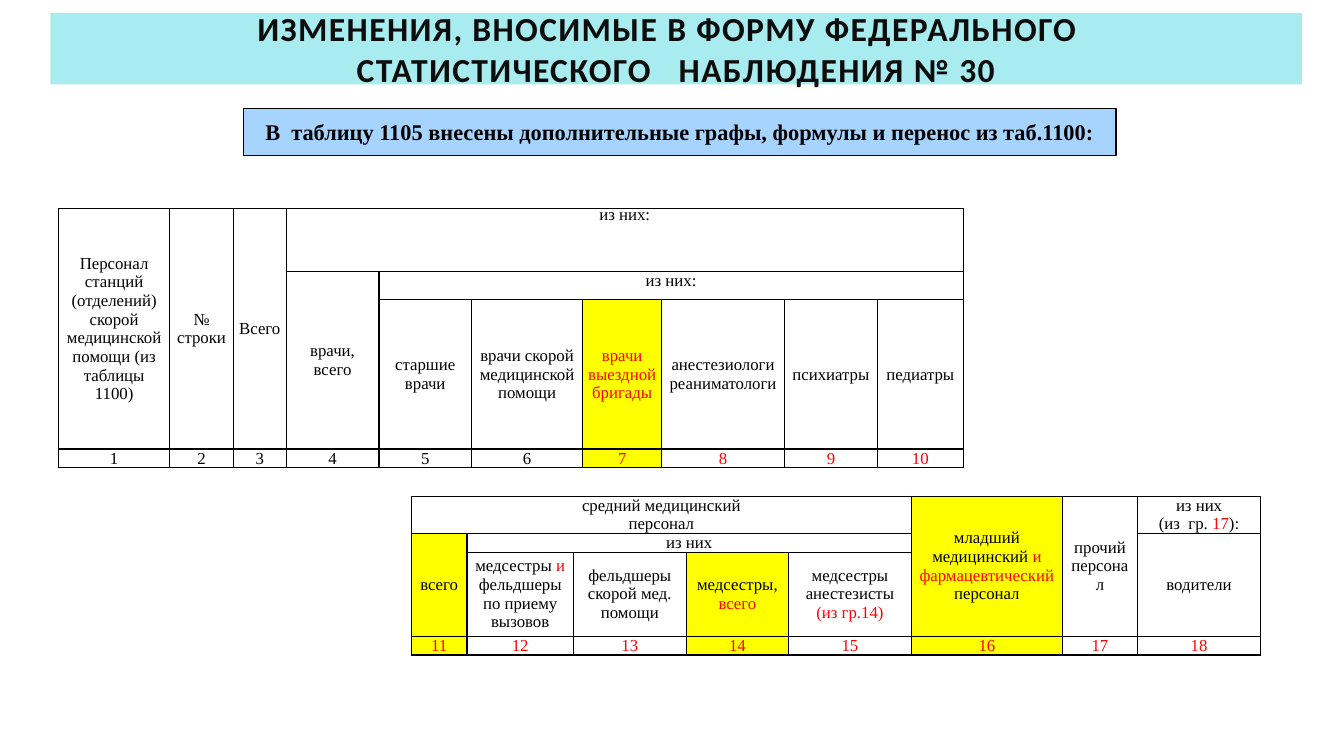
import pptx
import pptx.util
import pptx.dml.color
import pptx.enum.text
import pptx.enum.shapes
import pptx.oxml
import pptx.oxml.ns

Pt = pptx.util.Pt
ANCHOR = pptx.enum.text.MSO_ANCHOR

HUES = {"ink": "000000", "title": "0D0D0D", "red": "FF0000",
        "yellow": "FFFF00", "aqua": "A8ECEF", "sky": "A7D3FF"}

TITLE = ["ИЗМЕНЕНИЯ, ВНОСИМЫЕ В ФОРМУ ФЕДЕРАЛЬНОГО  ",
         "СТАТИСТИЧЕСКОГО   НАБЛЮДЕНИЯ № 30"]
NOTE = ["В  таблицу 1105 внесены дополнительные графы, формулы и перенос из таб.1100:"]

DOCTORS = {
    "left": 41.8, "top": 149.2,
    "cols": [79.5, 45.4, 37.8, 66.2, 66.2, 79.4, 56.4, 87.8, 66.3, 61.4],
    "rows": [45, 20, 106.6, 13.3],
    "cells": [
        (0, 0, 3, 1, "Персонал станций (отделений)\nскорой медицинской помощи (из таблицы 1100)"),
        (0, 1, 3, 1, "№\nстроки"),
        (0, 2, 3, 1, "Всего"),
        (0, 3, 1, 7, "из них:"),
        (1, 3, 2, 1, "врачи, всего"),
        (1, 4, 1, 6, "из них:"),
        (2, 4, 1, 1, "старшие врачи"),
        (2, 5, 1, 1, "врачи скорой медицинской помощи"),
        (2, 6, 1, 1, "*врачи выездной бригады*"),
        (2, 7, 1, 1, "анестезиологи реаниматологи"),
        (2, 8, 1, 1, "психиатры"),
        (2, 9, 1, 1, "педиатры"),
    ],
    "first": 1,
    "yellow": [(2, 6), (3, 6)],
    "narrow": [(2, 9)],
    "high": [(0, 3), (1, 4)],
    "tight": [(0, 3)],
}

STAFF = {
    "left": 293.8, "top": 354.4,
    "cols": [39.8, 76, 80.6, 73.1, 87.8, 107.8, 53.8, 87.8],
    "rows": [26.5, 13.4, 60, 13.4],
    "cells": [
        (0, 0, 1, 5, "средний медицинский\nперсонал"),
        (0, 5, 3, 1, "младший\nмедицинский *и фармацевтический* персонал"),
        (0, 6, 3, 1, "прочий персонал"),
        (0, 7, 1, 1, "из них\n(из  гр. *17*):"),
        (1, 0, 2, 1, "всего"),
        (1, 1, 1, 4, "из них"),
        (1, 7, 2, 1, "водители"),
        (2, 1, 1, 1, "медсестры *и *фельдшеры по приему вызовов"),
        (2, 2, 1, 1, "фельдшеры скорой мед.\nпомощи"),
        (2, 3, 1, 1, "медсестры, *всего*"),
        (2, 4, 1, 1, "медсестры анестезисты *(из гр.14)*"),
    ],
    "first": 11,
    "yellow": [(0, 5), (1, 0), (2, 3), (3, 0), (3, 3), (3, 5)],
    "narrow": [(0, 5), (0, 7)],
    "high": [],
    "tight": [],
}
FIRST_RED = 7


def rgb(name):
    return pptx.dml.color.RGBColor.from_string(HUES[name])


def write(frame, lines, size=12, font="Times New Roman", hue="ink",
          bold=False, gap=0, lead=None):
    for i, line in enumerate(lines):
        para = frame.paragraphs[0] if i == 0 else frame.add_paragraph()
        para.alignment = pptx.enum.text.PP_ALIGN.CENTER
        if lead:
            para.line_spacing = Pt(lead)
        for j, part in enumerate(line.split("*")):
            for k, bit in enumerate(part.split("\n")):
                if k:
                    para.add_line_break()
                if not bit:
                    continue
                run = para.add_run()
                run.text = bit
                run.font.size = Pt(size)
                run.font.name = font
                run.font.bold = bold
                run.font.color.rgb = rgb("red" if j % 2 else hue)
                if gap:
                    run.font._element.set("spc", str(gap * 100))


def banner(slide, box, fill, lines, edge=False, wrap=True, **look):
    shape = slide.shapes.add_shape(pptx.enum.shapes.MSO_SHAPE.RECTANGLE,
                                   *[Pt(v) for v in box])
    shape.shadow.inherit = False
    shape.fill.solid()
    shape.fill.fore_color.rgb = rgb(fill)
    if edge:
        shape.line.color.rgb = rgb("ink")
        shape.line.width = Pt(0.75)
    else:
        shape.line.fill.background()
    frame = shape.text_frame
    frame.word_wrap = wrap
    frame.vertical_anchor = ANCHOR.MIDDLE
    write(frame, lines, **look)


def border(cell):
    props = cell._tc.get_or_add_tcPr()
    for i, side in enumerate("LRTB"):
        props.insert(i, pptx.oxml.parse_xml(
            f'<a:ln{side} {pptx.oxml.ns.nsdecls("a")} w="{Pt(1)}"><a:solidFill>'
            f'<a:srgbClr val="{HUES["ink"]}"/></a:solidFill></a:ln{side}>'))


def grid(slide, data):
    cols, rows = data["cols"], data["rows"]
    table = slide.shapes.add_table(
        len(rows), len(cols), Pt(data["left"]), Pt(data["top"]),
        Pt(sum(cols)), Pt(sum(rows))).table
    table.first_row = table.horz_banding = False
    for col, width in zip(table.columns, cols):
        col.width = Pt(width)
    for row, height in zip(table.rows, rows):
        row.height = Pt(height)
    for r in range(len(rows)):
        for c in range(len(cols)):
            cell, spot = table.cell(r, c), (r, c)
            side = 0.7 if spot in data["narrow"] else 3.6
            cell.margin_left = cell.margin_right = Pt(side)
            cell.margin_top = cell.margin_bottom = Pt(0)
            cell.vertical_anchor = ANCHOR.TOP if spot in data["high"] else ANCHOR.MIDDLE
            if spot in data["yellow"]:
                cell.fill.solid()
                cell.fill.fore_color.rgb = rgb("yellow")
            else:
                cell.fill.background()
            border(cell)
    last = len(rows) - 1
    marks = [(last, c, 1, 1, str(n)) for c, n in enumerate(
        range(data["first"], data["first"] + len(cols)))]
    for r, c, tall, wide, text in data["cells"] + marks:
        cell = table.cell(r, c)
        if tall * wide > 1:
            cell.merge(table.cell(r + tall - 1, c + wide - 1))
        red = r == last and int(text) >= FIRST_RED
        write(cell.text_frame, [text], hue="red" if red else "ink",
              lead=11 if (r, c) in data["tight"] else None)


def main():
    deck = pptx.Presentation()
    deck.slide_width, deck.slide_height = Pt(960), Pt(540)
    slide = deck.slides.add_slide(deck.slide_layouts[6])
    banner(slide, (36, 9.2, 894, 51), "aqua", TITLE,
           size=24, font="Calibri", hue="title", bold=True, gap=1)
    banner(slide, (173.6, 77.2, 623.6, 33.8), "sky", NOTE,
           edge=True, wrap=False, size=16, bold=True)
    for data in (DOCTORS, STAFF):
        grid(slide, data)
    deck.save("out.pptx")


if __name__ == "__main__":
    main()
